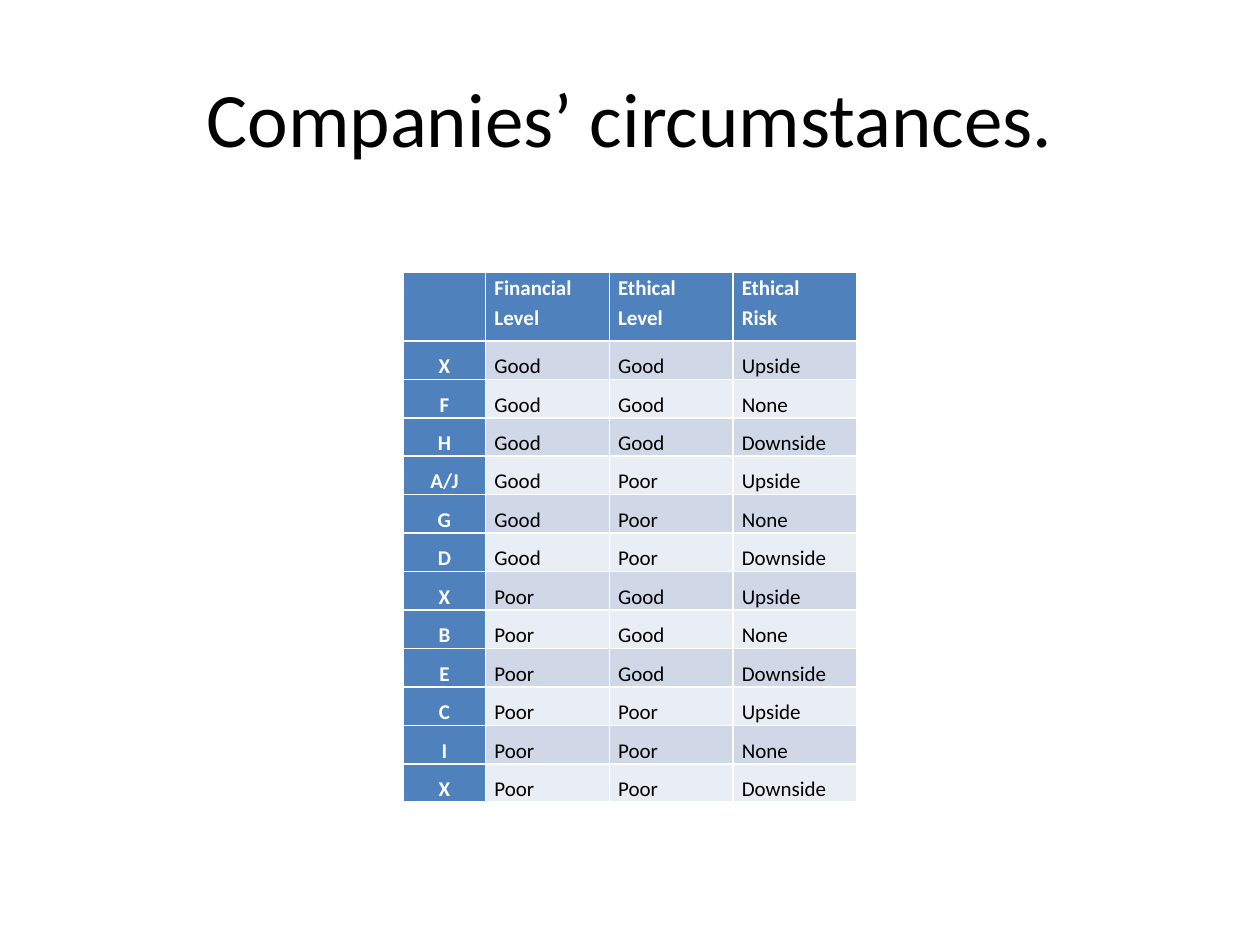
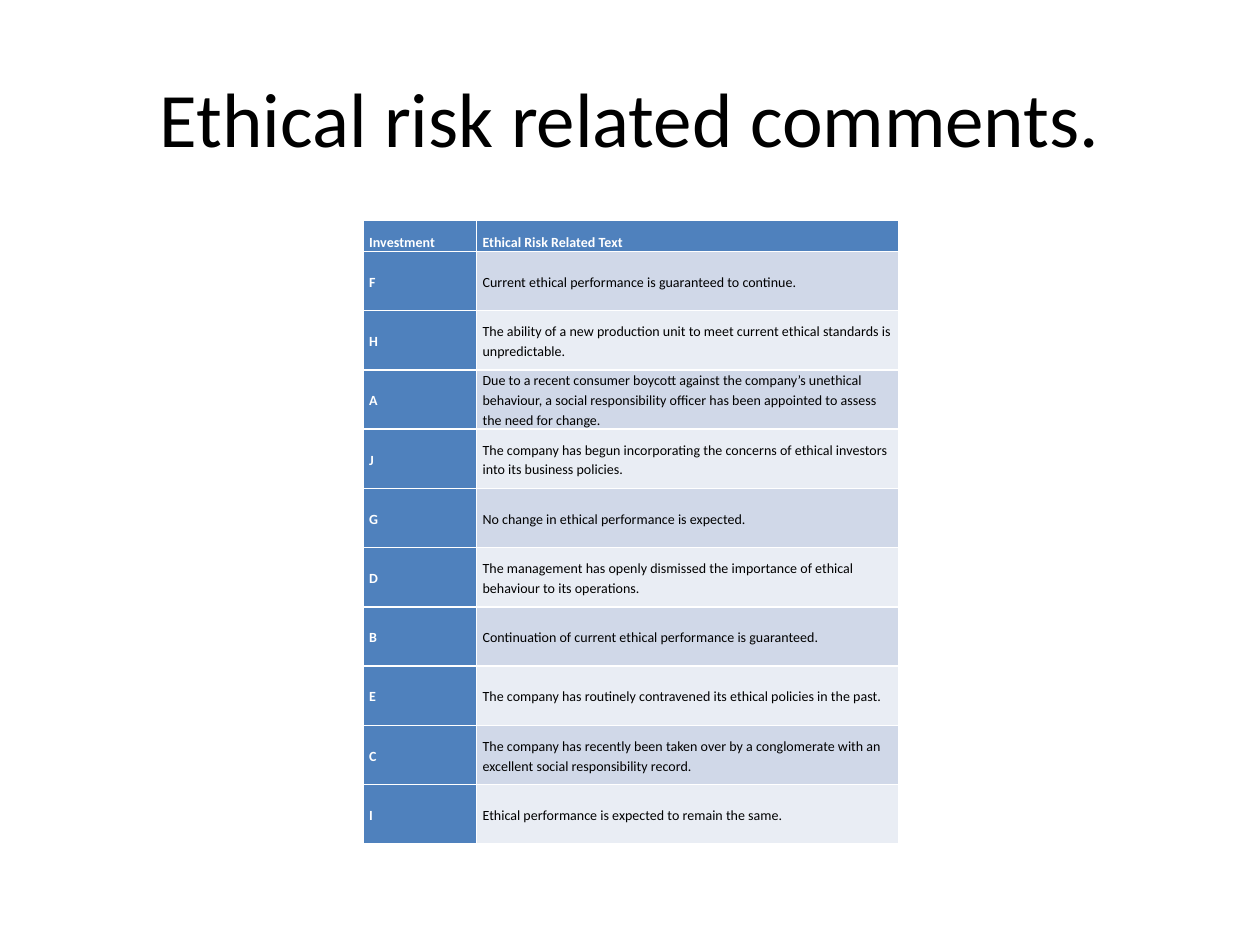
from pptx import Presentation
from pptx.dml.color import RGBColor
from pptx.enum.text import MSO_ANCHOR, PP_ALIGN
from pptx.util import Inches, Pt

# Shared look
FONT = "Calibri"
BLACK, WHITE = "000000", "FFFFFF"
HEAD_FILL = "4F81BD"
BAND_FILLS = ("D0D8E8", "E9EDF4")
TITLE_ONLY = 5

CIRCUMSTANCES = [
    ("", "Financial\nLevel", "Ethical\nLevel", "Ethical\nRisk"),
    ("X", "Good", "Good", "Upside"),
    ("F", "Good", "Good", "None"),
    ("H", "Good", "Good", "Downside"),
    ("A/J", "Good", "Poor", "Upside"),
    ("G", "Good", "Poor", "None"),
    ("D", "Good", "Poor", "Downside"),
    ("X", "Poor", "Good", "Upside"),
    ("B", "Poor", "Good", "None"),
    ("E", "Poor", "Good", "Downside"),
    ("C", "Poor", "Poor", "Upside"),
    ("I", "Poor", "Poor", "None"),
    ("X", "Poor", "Poor", "Downside"),
]

COMMENTS = [
    ("Investment", "Ethical Risk Related Text"),
    ("F", "Current ethical performance is guaranteed to continue."),
    ("H", "The ability of a new production unit to meet current ethical "
          "standards is unpredictable."),
    ("A", "Due to a recent consumer boycott against the company’s unethical "
          "behaviour, a social responsibility officer has been appointed to "
          "assess the need for change."),
    ("J", "The company has begun incorporating the concerns of ethical "
          "investors into its business policies."),
    ("G", "No change in ethical performance is expected."),
    ("D", "The management has openly dismissed the importance of ethical "
          "behaviour to its operations."),
    ("B", "Continuation of current ethical performance is guaranteed."),
    ("E", "The company has routinely contravened its ethical policies in "
          "the past."),
    ("C", "The company has recently been taken over by a conglomerate with "
          "an excellent social responsibility record."),
    ("I", "Ethical performance is expected to remain the same."),
]


def color(hex_code):
    return RGBColor.from_string(hex_code)


def to_slide(prs, box):
    """Turn shares of the slide (left, top, width, height) into lengths."""
    w, h = prs.slide_width, prs.slide_height
    return [int(share * side) for share, side in zip(box, (w, h, w, h))]


def add_titled_slide(prs, title):
    slide = prs.slides.add_slide(prs.slide_layouts[TITLE_ONLY])
    sp = slide.shapes.title
    sp.left, sp.top, sp.width, sp.height = to_slide(prs, (0.05, 0.04, 0.9, 0.167))
    tf = sp.text_frame
    tf.text = title
    tf.vertical_anchor = MSO_ANCHOR.MIDDLE
    p = tf.paragraphs[0]
    p.alignment = PP_ALIGN.CENTER
    p.font.name, p.font.size = FONT, Pt(44)
    p.font.color.rgb = color(BLACK)
    return slide


def fill_cell(cell, text, fill, is_head, size, spacing, inset, anchor, align):
    cell.fill.solid()
    cell.fill.fore_color.rgb = color(fill)
    cell.margin_left = cell.margin_right = Inches(inset)
    cell.margin_top = cell.margin_bottom = 0
    cell.vertical_anchor = anchor
    cell.text_frame.text = text
    for p in cell.text_frame.paragraphs:
        p.alignment, p.line_spacing = align, spacing
        p.font.name, p.font.size, p.font.bold = FONT, Pt(size), is_head
        p.font.color.rgb = color(WHITE if is_head else BLACK)


def add_banded_table(prs, slide, rows, box, col_weights, head_share, size, inset,
                     body_spacing=1.15, head_anchor=MSO_ANCHOR.TOP,
                     body_anchor=MSO_ANCHOR.TOP, key_align=PP_ALIGN.LEFT):
    """Table with a header row and key column; head_share is of its height."""
    left, top, width, height = to_slide(prs, box)
    table = slide.shapes.add_table(len(rows), len(col_weights),
                                   left, top, width, height).table
    # The table style draws the white rules
    table.first_row = table.first_col = table.horz_banding = True

    for col, weight in zip(table.columns, col_weights):
        col.width = int(width * weight / sum(col_weights))
    head_height = int(height * head_share)
    body_height = (height - head_height) // (len(rows) - 1)

    for i, row in enumerate(rows):
        table.rows[i].height = body_height if i else head_height
        for j, text in enumerate(row):
            is_head = i == 0 or j == 0
            fill_cell(table.cell(i, j), text,
                      HEAD_FILL if is_head else BAND_FILLS[(i - 1) % 2],
                      is_head, size, body_spacing if i else 1.15, inset,
                      body_anchor if i else head_anchor,
                      key_align if i and j == 0 else PP_ALIGN.LEFT)


def main():
    prs = Presentation()
    prs.slide_width, prs.slide_height = Inches(10), Inches(7.5)

    # Companies' levels and risk
    slide = add_titled_slide(prs, "Companies’ circumstances.")
    add_banded_table(prs, slide, CIRCUMSTANCES, (0.32, 0.288, 0.36, 0.56),
                     (2, 3, 3, 3), 0.13, size=12, inset=0.07,
                     body_spacing=1.5, key_align=PP_ALIGN.CENTER)

    # Comment on each investment
    slide = add_titled_slide(prs, "Ethical risk related comments.")
    add_banded_table(prs, slide, COMMENTS, (0.288, 0.233, 0.425, 0.66),
                     (0.9, 3.35), 0.05, size=8, inset=0.05,
                     head_anchor=MSO_ANCHOR.BOTTOM,
                     body_anchor=MSO_ANCHOR.MIDDLE)

    prs.save("out.pptx")


if __name__ == "__main__":
    main()
